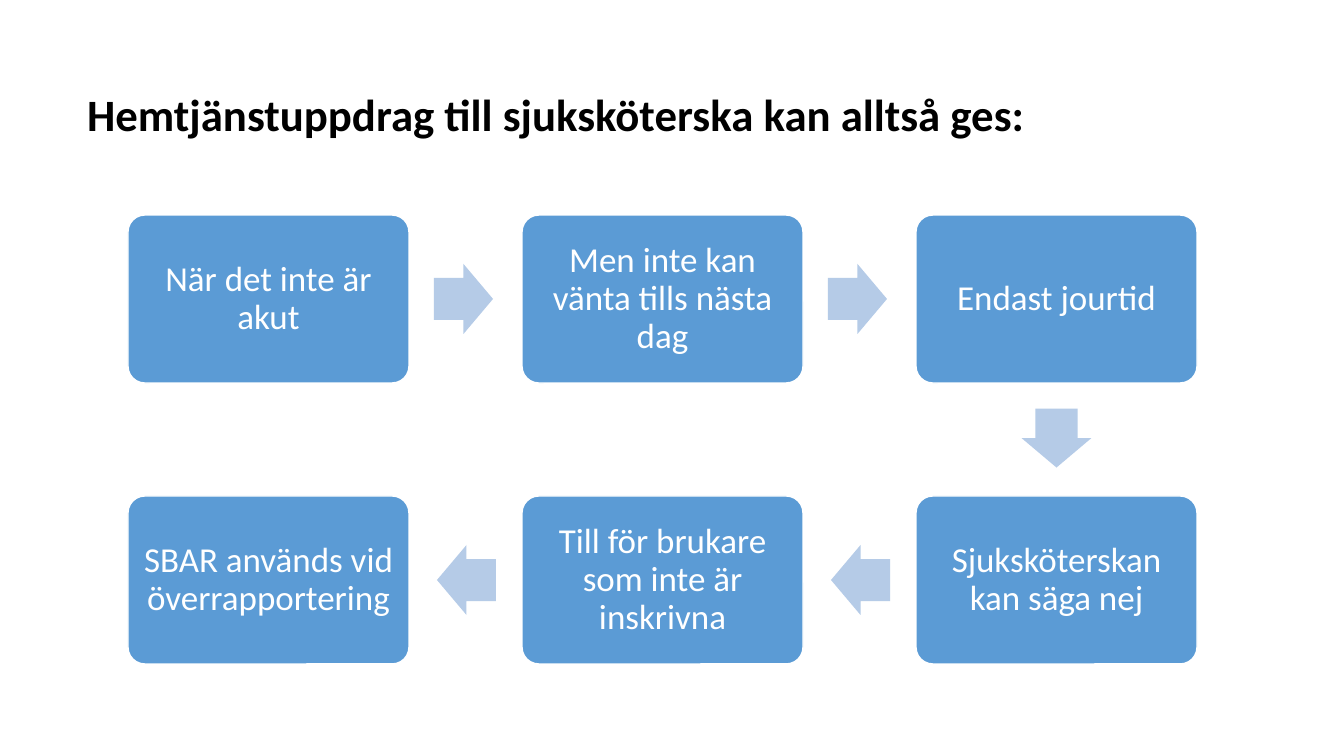
from pptx import Presentation
from pptx import util as u
from pptx.dml.color import RGBColor
from pptx.enum import shapes, text

PX = 914400 / 100.8
COLORS = {"box": "5B9BD5", "arrow": "B5CBE7", "white": "FFFFFF", "black": "000000"}
BOX_W, BOX_H = 281, 168
LEFT, TOP = 128, 215
COL_STEP, ROW_STEP = 394, 281
ARROW_W, ARROW_H = 59, 70
ARROWS = {"right": (306, 49, 0), "down": (111, 188, 90), "left": (-85, 49, 180)}
STEPS = [
    ("När det inte är akut", 0, 0, "right"),
    ("Men inte kan vänta tills nästa dag", 1, 0, "right"),
    ("Endast jourtid", 2, 0, "down"),
    ("Sjuksköterskan kan säga nej", 2, 1, "left"),
    ("Till för brukare som inte är inskrivna", 1, 1, "left"),
    ("SBAR används vid överrapportering", 0, 1, None),
]


def px(n):
    return u.Emu(round(n * PX))


def color(name):
    return RGBColor.from_string(COLORS[name])


class Deck:
    """Holds the presentation style and the current slide."""

    def __init__(self):
        self.font = "Calibri"
        self.prs = Presentation()
        self.prs.slide_width, self.prs.slide_height = px(1344), px(756)
        self.slide = self.prs.slides.add_slide(self.prs.slide_layouts[5])

    def set_text(self, tf, words, size, fill, align, anchor, bold=False):
        tf.text = words
        tf.word_wrap = True
        tf.auto_size = text.MSO_AUTO_SIZE.NONE
        tf.vertical_anchor = anchor
        p = tf.paragraphs[0]
        p.alignment = align
        p.line_spacing = 0.9
        f = p.runs[0].font
        f.name, f.size, f.bold = self.font, u.Pt(size), bold
        f.color.rgb = color(fill)

    def title(self, words, x, y, w, h):
        sp = self.slide.shapes.title
        sp.left, sp.top, sp.width, sp.height = map(px, (x, y, w, h))
        self.set_text(sp.text_frame, words, 32, "black", text.PP_ALIGN.LEFT,
                      text.MSO_ANCHOR.TOP, bold=True)

    def shape(self, kind, fill, x, y, w, h, adjustments):
        sp = self.slide.shapes.add_shape(kind, *map(px, (x, y, w, h)))
        sp.shadow.inherit = False
        sp.fill.solid()
        sp.fill.fore_color.rgb = color(fill)
        for i, value in enumerate(adjustments):
            sp.adjustments[i] = value
        return sp

    def box(self, words, x, y):
        sp = self.shape(shapes.MSO_SHAPE.ROUNDED_RECTANGLE, "box",
                        x, y, BOX_W, BOX_H, [0.1])
        sp.line.color.rgb = color("white")
        sp.line.width = u.Pt(1)
        tf = sp.text_frame
        tf.margin_left = tf.margin_right = tf.margin_top = tf.margin_bottom = px(10)
        self.set_text(tf, words, 25, "white", text.PP_ALIGN.CENTER,
                      text.MSO_ANCHOR.MIDDLE)

    def arrow(self, x, y, rotation):
        sp = self.shape(shapes.MSO_SHAPE.RIGHT_ARROW, "arrow",
                        x, y, ARROW_W, ARROW_H, [0.6, 0.5])
        sp.line.fill.background()
        sp.rotation = rotation


def main():
    deck = Deck()
    deck.title("Hemtjänstuppdrag till sjuksköterska kan alltså ges:", 77, 88, 1191, 72)
    for words, col, row, direction in STEPS:
        x, y = LEFT + col * COL_STEP, TOP + row * ROW_STEP
        deck.box(words, x, y)
        if direction:
            dx, dy, rotation = ARROWS[direction]
            deck.arrow(x + dx, y + dy, rotation)
    deck.prs.save("out.pptx")


if __name__ == "__main__":
    main()
